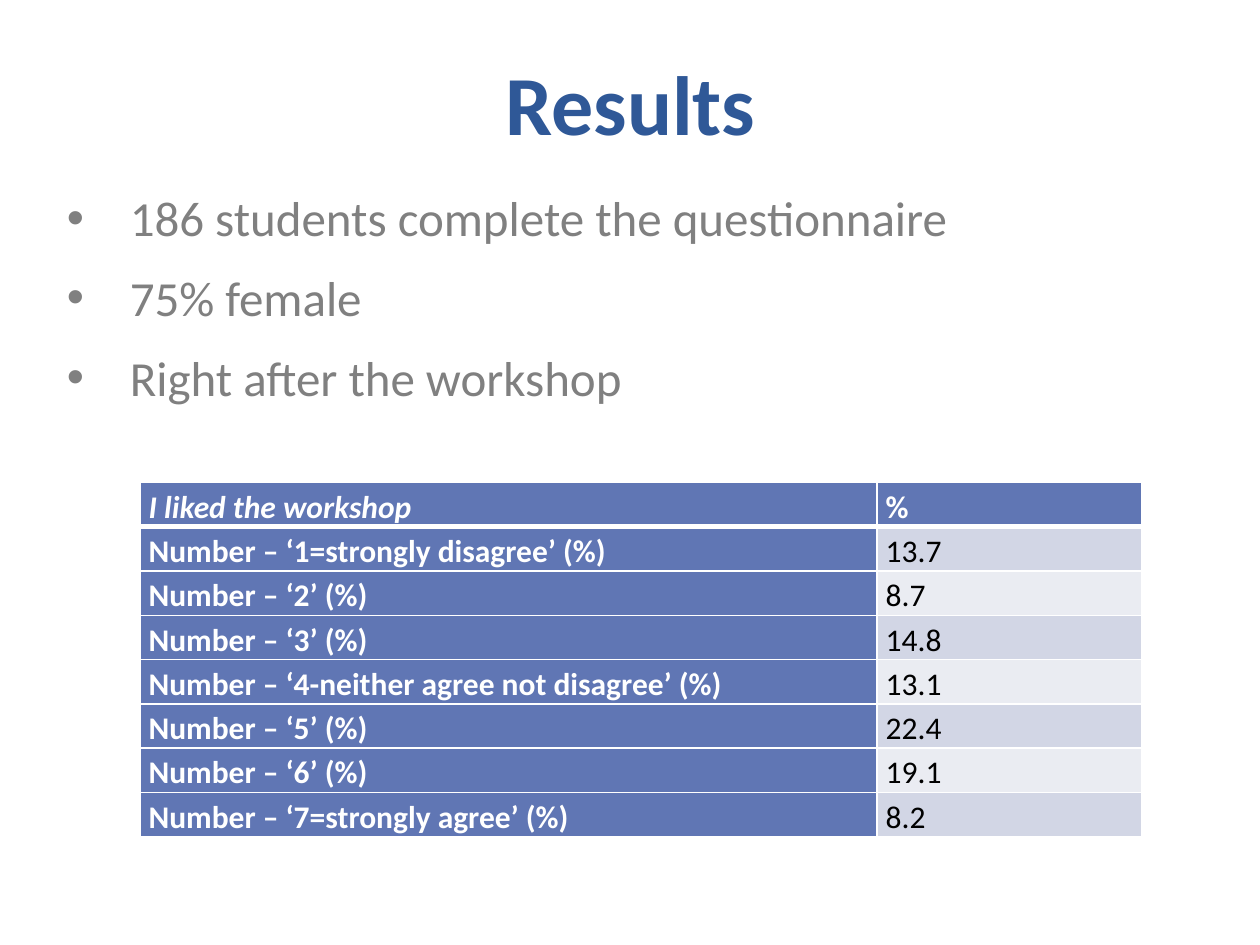
from dataclasses import dataclass

from lxml.etree import SubElement
from pptx import Presentation
from pptx.dml.color import RGBColor
from pptx.enum.text import MSO_ANCHOR, MSO_AUTO_SIZE, PP_ALIGN
from pptx.oxml import parse_xml
from pptx.oxml.ns import nsdecls, qn
from pptx.util import Inches, Pt


@dataclass(frozen=True)
class Theme:
    font: str = "Calibri"
    title_color: str = "2F5897"
    list_color: str = "808080"
    header_fill: str = "6076B4"
    band_fills: tuple = ("D2D6E5", "EAECF2")
    white: str = "FFFFFF"
    black: str = "000000"
    title_size: int = 48
    list_size: int = 28
    table_size: int = 18


def format_run(paragraph, text, size, color, **styles):
    run = paragraph.add_run()
    run.text = text
    run.font.color.rgb = RGBColor.from_string(color)
    for name, value in {"name": theme.font, "size": Pt(size), **styles}.items():
        setattr(run.font, name, value)


def set_borders(cell, bottom_width):
    properties = cell._tc.get_or_add_tcPr()
    widths = {"lnL": 1, "lnR": 1, "lnT": 1, "lnB": bottom_width}
    for position, (side, width) in enumerate(widths.items()):
        line = parse_xml(
            f'<a:{side} {nsdecls("a")} w="{Pt(width)}"><a:solidFill>'
            f'<a:srgbClr val="{theme.white}"/></a:solidFill></a:{side}>')
        properties.insert(position, line)


theme = Theme()
presentation = Presentation()
presentation.slide_width, presentation.slide_height = Inches(10), Inches(7.5)
slide = presentation.slides.add_slide(presentation.slide_layouts[1])
title, body = slide.placeholders

# Placeholder boxes
boxes = (
    (title, (0.28, 0.05, 9.45, 1.52), 0.05, MSO_ANCHOR.MIDDLE),
    (body, (0.43, 1.39, 9.29, 5.41), 0.1, MSO_ANCHOR.TOP),
)
for shape, box, inset, anchor in boxes:
    for name, value in zip(("left", "top", "width", "height"), box):
        setattr(shape, name, Inches(value))
    frame_format = {
        "margin_left": Inches(0.1), "margin_right": Inches(0.1),
        "margin_top": Inches(inset), "margin_bottom": Inches(inset),
        "vertical_anchor": anchor, "word_wrap": True,
        "auto_size": MSO_AUTO_SIZE.NONE,
    }
    for name, value in frame_format.items():
        setattr(shape.text_frame, name, value)

# Title
paragraph = title.text_frame.paragraphs[0]
paragraph.alignment = PP_ALIGN.CENTER
paragraph.line_spacing = Pt(58)
format_run(paragraph, "Results", theme.title_size, theme.title_color, bold=True)

# Bulleted list
facts = (
    "186 students complete the questionnaire",
    "75% female",
    "Right after the workshop",
)
for index, fact in enumerate(facts):
    frame = body.text_frame
    paragraph = frame.add_paragraph() if index else frame.paragraphs[0]
    paragraph.space_before, paragraph.space_after = Pt(0), Pt(12)
    properties = paragraph._p.get_or_add_pPr()
    properties.set("marL", str(Inches(0.5)))
    properties.set("indent", str(Inches(-0.5)))
    SubElement(properties, qn("a:buChar"), char="•")
    format_run(paragraph, fact, theme.list_size, theme.list_color)

# Table of answers
answers = (
    ("I liked the workshop", "%"),
    ("Number – ‘1=strongly disagree’ (%)", "13.7"),
    ("Number – ‘2’ (%)", "8.7"),
    ("Number – ‘3’ (%)", "14.8"),
    ("Number – ‘4-neither agree not disagree’ (%)", "13.1"),
    ("Number – ‘5’ (%)", "22.4"),
    ("Number – ‘6’ (%)", "19.1"),
    ("Number – ‘7=strongly agree’ (%)", "8.2"),
)
column_widths = (5.85, 2.1)
row_height = 0.35
table = slide.shapes.add_table(
    len(answers), len(column_widths), Inches(1.11), Inches(3.83),
    Inches(sum(column_widths)), Inches(row_height * len(answers))).table
for column, width in zip(table.columns, column_widths):
    column.width = Inches(width)

cell_format = {
    "margin_left": Inches(0.07), "margin_right": Inches(0.07),
    "margin_top": 0, "margin_bottom": 0,
}
for row, answer in enumerate(answers):
    for column, text in enumerate(answer):
        cell = table.cell(row, column)
        is_header = row == 0 or column == 0
        fill = theme.header_fill if is_header else theme.band_fills[(row - 1) % 2]
        for name, value in cell_format.items():
            setattr(cell, name, value)
        cell.fill.solid()
        cell.fill.fore_color.rgb = RGBColor.from_string(fill)
        set_borders(cell, 3 if row == 0 else 1)
        paragraph = cell.text_frame.paragraphs[0]
        paragraph.line_spacing = 1.15
        format_run(paragraph, text, theme.table_size,
                   theme.white if is_header else theme.black,
                   bold=is_header, italic=row == 0 and column == 0)

presentation.save("out.pptx")
